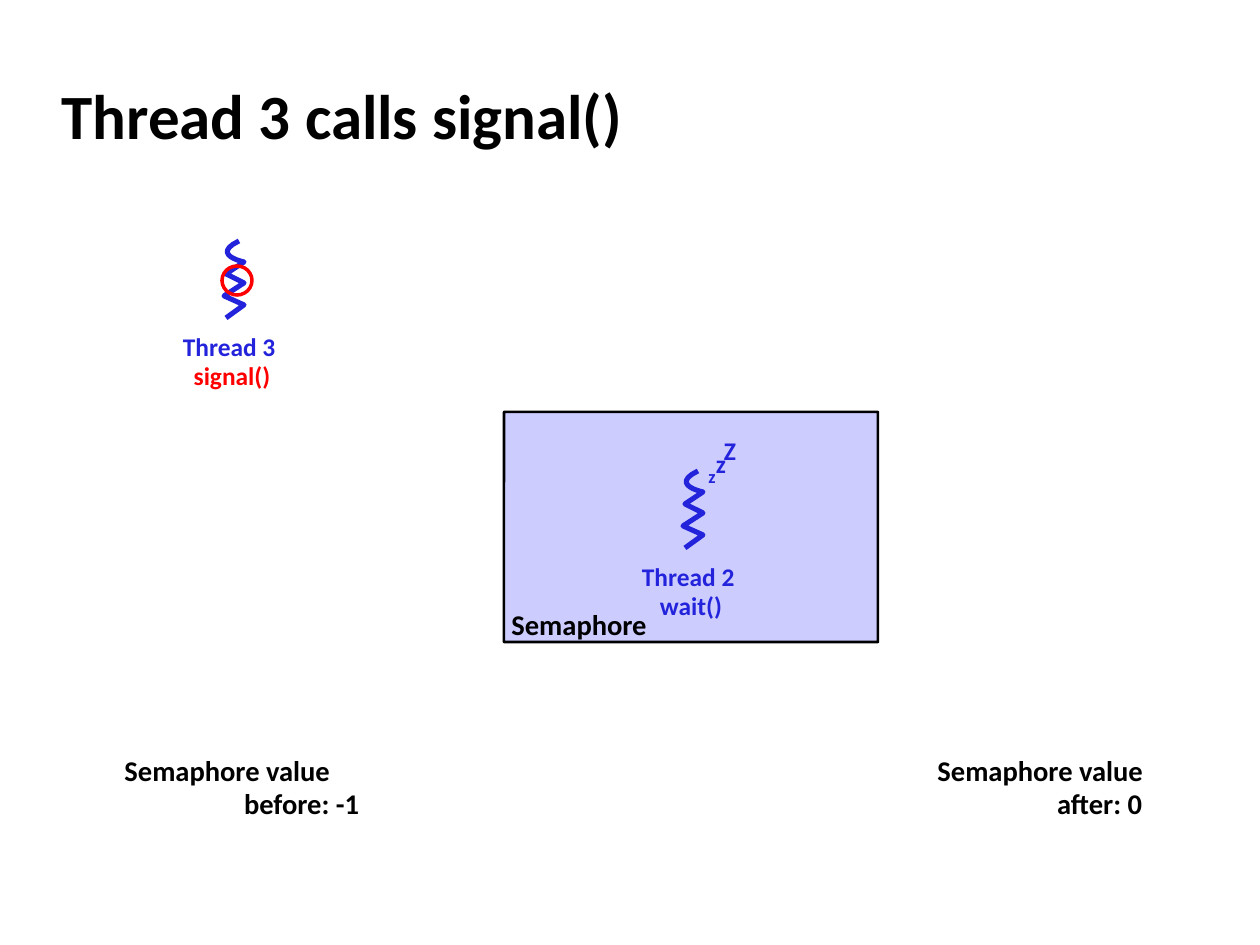
from pptx import Presentation
from pptx.dml.color import RGBColor
from pptx.enum.shapes import MSO_SHAPE as Kind
from pptx.enum.text import MSO_ANCHOR as Anchor, PP_ALIGN as Align
from pptx.util import Pt

SCALE = 914400 / 126
BLACK, BLUE, RED, PALE = "000000", "2323DC", "FF0000", "CCCCFF"
NAME = {"size": Pt(14.5), "name": "Calibri", "bold": True}
SMALL = {**NAME, "size": Pt(10.5)}
NOTE = {**NAME, "size": Pt(16.3)}
HEAD = {**NAME, "size": Pt(36)}
BARE = {"margin_left": 0, "margin_top": 0, "margin_right": 0,
        "margin_bottom": 0, "vertical_anchor": Anchor.TOP}
START, PULL = (68, 0), (39, 14)
ZIGZAG = [(73, 21), (55, 33), (73, 42), (53, 55), (73, 64), (55, 77)]


def emu(*vals):
    """Turn px into EMU."""
    return [round(val * SCALE) for val in vals]


def color(code):
    """Make a colour from a hex string."""
    return RGBColor.from_string(code)


def apply(item, form):
    """Set each attribute of a format dict."""
    for key, val in form.items():
        setattr(item, key, val)


def paint(shape, line, width, fill=None):
    """Give a shape its outline and fill."""
    shape.shadow.inherit = False
    shape.line.color.rgb = color(line)
    shape.line.width = Pt(width)
    if fill:
        shape.fill.solid()
        shape.fill.fore_color.rgb = color(fill)
    else:
        shape.fill.background()


def write(slide, box, lines, font, align=Align.LEFT, wrap=True):
    """Place a text box of (text, colour, indent) lines."""
    frame = slide.shapes.add_textbox(*emu(*box)).text_frame
    apply(frame, {**BARE, "word_wrap": wrap})
    for num, (text, tint, inset) in enumerate(lines):
        para = frame.add_paragraph() if num else frame.paragraphs[0]
        apply(para, {"alignment": align, "line_spacing": 0.95})
        if inset:
            para._p.get_or_add_pPr().set("marL", str(emu(inset)[0]))
        run = para.add_run()
        run.text = text
        apply(run.font, font)
        run.font.color.rgb = color(tint)


def title(slide, box, text):
    """Format the title placeholder."""
    shape = slide.shapes.title
    apply(shape, dict(zip(("left", "top", "width", "height"), emu(*box))))
    frame = shape.text_frame
    frame.text = text
    frame.vertical_anchor = Anchor.MIDDLE
    para = frame.paragraphs[0]
    para.alignment = Align.LEFT
    font = para.runs[0].font
    apply(font, HEAD)
    font.color.rgb = color(BLACK)


def bend(start, pull, end, steps=12):
    """Sample a cubic curve whose second handle is its end."""
    for num in range(1, steps + 1):
        t = num / steps
        a, b = (1 - t) ** 3, 3 * t * (1 - t) ** 2
        yield tuple(a * p + b * q + (1 - a - b) * r
                    for p, q, r in zip(start, pull, end))


def thread(slide, left, top, name, call, tint=BLUE):
    """Draw a thread squiggle with its name and call."""
    path = [START, *bend(START, PULL, ZIGZAG[0]), *ZIGZAG[1:]]
    dots = [emu(left + x, top + y) for x, y in path]
    draw = slide.shapes.build_freeform(*dots[0])
    draw.add_line_segments(dots[1:], close=False)
    paint(draw.convert_to_shape(), BLUE, 2.89)
    write(slide, (left, top + 92, 122, 59),
          [(name + " ", BLUE, 0), (call, tint, 0)], NAME, Align.CENTER, False)


def snore(slide, left, top):
    """Write the rising letters of a sleeping thread."""
    for x, y, text, font in ((18, 0, "Z", NAME), (9, 13, "z", NAME),
                             (0, 30, "z", SMALL)):
        write(slide, (left + x, top + y, 122, 59), [(text, BLUE, 0)],
              font, Align.CENTER, False)


def caller(slide, left, top):
    """Draw the calling thread, ringed."""
    thread(slide, left, top, "Thread 3", "signal()", RED)
    ring = slide.shapes.add_shape(Kind.OVAL, *emu(left + 51, top + 25, 30, 29))
    paint(ring, RED, 2)


def semaphore(slide, left, top, width, height):
    """Draw the semaphore with its sleeping thread."""
    frame = slide.shapes.add_shape(Kind.ROUNDED_RECTANGLE,
                                   *emu(left, top, width, height))
    frame.adjustments[0] = 0.001
    paint(frame, BLACK, 1.45, PALE)
    snore(slide, left + 147, top + 25)
    thread(slide, left + 126, top + 59, "Thread 2", "wait()")
    write(slide, (left + 1, top + 197, width, 33),
          [(" Semaphore", BLACK, 0)], NOTE)


def value(slide, left, top, text):
    """Write one semaphore value."""
    write(slide, (left, top, 374, 33),
          [(" Semaphore value", BLACK, 0), (text, BLACK, 126)], NOTE)


def main():
    """Build and save the slide."""
    deck = Presentation()
    deck.slide_width, deck.slide_height = emu(1260, 945)
    slide = deck.slides.add_slide(deck.slide_layouts[5])
    title(slide, (49, 62, 1046, 105), "Thread 3 calls signal()")
    semaphore(slide, 504, 412, 374, 230)
    caller(slide, 171, 241)
    value(slide, 118, 756, "before: -1")
    value(slide, 931, 756, "after: 0")
    deck.save("out.pptx")


if __name__ == "__main__":
    main()
